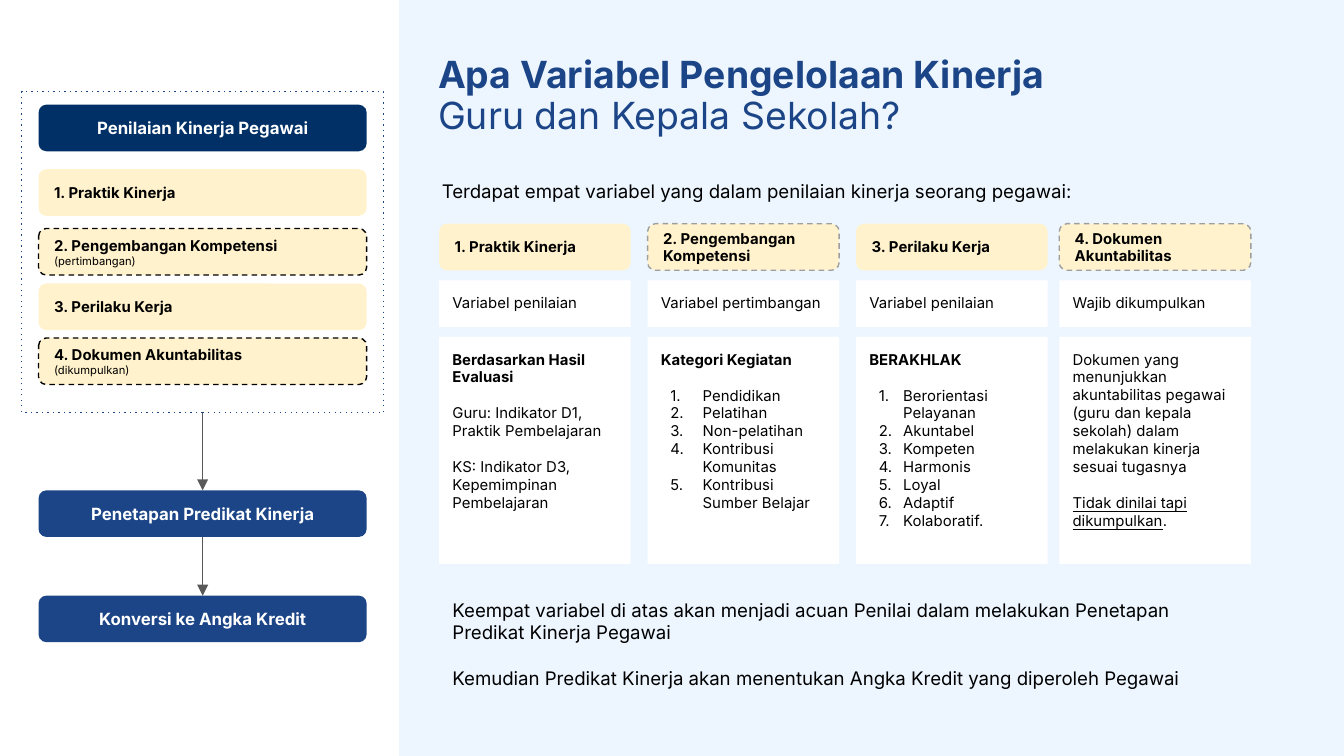
"""Build the slide on the performance variables of teachers and principals."""
from typing import NamedTuple

from lxml.etree import SubElement
from pptx import Presentation
from pptx.dml.color import RGBColor
from pptx.enum.dml import MSO_LINE as Dash
from pptx.enum.shapes import MSO_CONNECTOR as Connector, MSO_SHAPE as Shape
from pptx.enum.text import MSO_ANCHOR as Anchor, MSO_AUTO_SIZE as AutoSize, PP_ALIGN as Align
from pptx.oxml.ns import qn
from pptx.util import Cm, Pt

FONT = "Inter"
BLACK = RGBColor(0x00, 0x00, 0x00)
WHITE = RGBColor(0xFF, 0xFF, 0xFF)
PALE = RGBColor(0xED, 0xF6, 0xFF)
CREAM = RGBColor(0xFF, 0xF2, 0xCC)
BLUE = RGBColor(0x1C, 0x45, 0x87)
NAVY = RGBColor(0x01, 0x30, 0x66)
GREY = RGBColor(0x9E, 0x9E, 0x9E)
DARK_GREY = RGBColor(0x59, 0x59, 0x59)


class Line(NamedTuple):
    """One paragraph: its text, look and the space above it."""
    text: str
    bold: bool = False
    size: float = 8
    before: float = 0
    numbered: bool = False
    underlined: str = ""


def numbered_list(items):
    """Return numbered lines with a gap above the first."""
    return [Line(item, before=0 if i else 9.7, numbered=True) for i, item in enumerate(items)]


TITLE = [Line("Apa Variabel Pengelolaan Kinerja", True, 20), Line("Guru dan Kepala Sekolah?", size=20)]
INTRO = [Line("Terdapat empat variabel yang dalam penilaian kinerja seorang pegawai:", size=10)]
CLOSING = [
    Line("Keempat variabel di atas akan menjadi acuan Penilai dalam melakukan Penetapan "
         "Predikat Kinerja Pegawai", size=10),
    Line("Kemudian Predikat Kinerja akan menentukan Angka Kredit yang diperoleh Pegawai",
         size=10, before=12.1),
]
STEPS = [
    ("Penilaian Kinerja Pegawai", 1.98, NAVY),
    ("Penetapan Predikat Kinerja", 9.27, BLUE),
    ("Konversi ke Angka Kredit", 11.26, BLUE),
]
VARIABLES = [
    {"name": "1. Praktik Kinerja", "left": 8.3, "top": 3.2, "role": "Variabel penilaian", "note": "",
     "indent": None,
     "detail": [Line("Berdasarkan Hasil Evaluasi", True),
                Line("Guru: Indikator D1, Praktik Pembelajaran", before=9.7),
                Line("KS: Indikator D3, Kepemimpinan Pembelajaran", before=9.7)]},
    {"name": "2. Pengembangan Kompetensi", "left": 12.24, "top": 4.32, "role": "Variabel pertimbangan",
     "note": "(pertimbangan)", "indent": (0.79, 0.61),
     "detail": [Line("Kategori Kegiatan", True)] + numbered_list([
         "Pendidikan", "Pelatihan", "Non-pelatihan", "Kontribusi Komunitas",
         "Kontribusi Sumber Belajar"])},
    {"name": "3. Perilaku Kerja", "left": 16.18, "top": 5.36, "role": "Variabel penilaian", "note": "",
     "indent": (0.64, 0.46),
     "detail": [Line("BERAKHLAK", True)] + numbered_list([
         "Berorientasi Pelayanan", "Akuntabel", "Kompeten", "Harmonis", "Loyal", "Adaptif",
         "Kolaboratif."])},
    {"name": "4. Dokumen Akuntabilitas", "left": 20.02, "top": 6.39, "role": "Wajib dikumpulkan",
     "note": "(dikumpulkan)", "indent": None,
     "detail": [Line("Dokumen yang menunjukkan akuntabilitas pegawai (guru dan kepala sekolah) "
                     "dalam melakukan kinerja sesuai tugasnya"),
                Line(".", before=9.7, underlined="Tidak dinilai tapi dikumpulkan")]},
]
BAR_LEFT, BAR_WIDTH, BAR_HEIGHT = 0.73, 6.2, 0.88
CARD_WIDTH = 3.62
HEAD_TOP, ROLE_TOP, DETAIL_TOP, DETAIL_HEIGHT = 4.23, 5.3, 6.37, 4.29
FRAME = (0.41, 1.73, 6.84, 6.07)


def write(box, lines, color=BLACK, align=Align.LEFT, anchor=Anchor.TOP, spacing=1.0,
          indent=None, insets=(0.25, 0.25)):
    """Write the lines into a box, run by run."""
    frame = box.text_frame
    frame.word_wrap, frame.auto_size, frame.vertical_anchor = True, AutoSize.NONE, anchor
    frame.margin_left = frame.margin_right = Cm(insets[0])
    frame.margin_top = frame.margin_bottom = Cm(insets[1])
    for i, line in enumerate(lines):
        para = frame.add_paragraph() if i else frame.paragraphs[0]
        para.alignment, para.line_spacing = align, spacing
        para.space_before, para.space_after = Pt(line.before), Pt(0)
        settings = para._p.get_or_add_pPr()
        left, hang = indent if line.numbered else (0, 0)
        settings.set("marL", str(Cm(left)))
        settings.set("indent", str(-Cm(hang)))
        if line.numbered:
            SubElement(settings, qn("a:buFont"), typeface=FONT)
            SubElement(settings, qn("a:buAutoNum"), type="arabicPeriod")
        else:
            SubElement(settings, qn("a:buNone"))
        for text, underline in ((line.underlined, True), (line.text, False)):
            if text:
                span = para.add_run()
                span.text = text
                span.font.name, span.font.size = FONT, Pt(line.size)
                span.font.bold, span.font.underline = line.bold, underline
                span.font.color.rgb = color


def place(box, left, top, width, height):
    """Move and size a box, in centimetres."""
    box.left, box.top, box.width, box.height = Cm(left), Cm(top), Cm(width), Cm(height)


def add_box(page, bounds, fill=None, rounded=False, outline=None):
    """Add a flat rectangle, optionally rounded or with a dashed outline."""
    kind = Shape.ROUNDED_RECTANGLE if rounded else Shape.RECTANGLE
    box = page.shapes.add_shape(kind, *map(Cm, bounds))
    box.shadow.inherit = False
    if fill is None:
        box.fill.background()
    else:
        box.fill.solid()
        box.fill.fore_color.rgb = fill
    if outline is None:
        box.line.fill.background()
    else:
        box.line.color.rgb = outline
        box.line.width, box.line.dash_style = Pt(0.75), Dash.DASH
    return box


def add_arrow(page, x, start, end):
    """Add a downward arrow."""
    arrow = page.shapes.add_connector(Connector.STRAIGHT, Cm(x), Cm(start), Cm(x), Cm(end))
    arrow.line.color.rgb, arrow.line.width = DARK_GREY, Pt(0.75)
    SubElement(arrow.line._get_or_add_ln(), qn("a:tailEnd"), type="triangle")
    SubElement(arrow._element.spPr, qn("a:effectLst"))


def add_flow(page):
    """Draw the left panel with its steps, variables and arrows."""
    add_box(page, (0, 0, 7.54, 14.29), WHITE)
    frame = add_box(page, FRAME, outline=BLUE)
    frame.line._get_or_add_ln().find(qn("a:prstDash")).set("val", "dot")
    for name, top, fill in STEPS:
        bar = add_box(page, (BAR_LEFT, top, BAR_WIDTH, BAR_HEIGHT), fill, True)
        write(bar, [Line(name, True, 9)], WHITE, Align.CENTER, Anchor.MIDDLE)
    for variable in VARIABLES:
        note = variable["note"]
        bar = add_box(page, (BAR_LEFT, variable["top"], BAR_WIDTH, BAR_HEIGHT), CREAM, True,
                      BLACK if note else None)
        lines = [Line(variable["name"], True)] + ([Line(note, size=6)] if note else [])
        write(bar, lines, anchor=Anchor.MIDDLE)
    middle = BAR_LEFT + BAR_WIDTH / 2
    second, third = STEPS[1][1], STEPS[2][1]
    add_arrow(page, middle, FRAME[1] + FRAME[3], second)
    add_arrow(page, middle, second + BAR_HEIGHT, third)


def add_columns(page):
    """Draw one column of three cards for each variable."""
    for variable in VARIABLES:
        left = variable["left"]
        head = add_box(page, (left, HEAD_TOP, CARD_WIDTH, BAR_HEIGHT), CREAM, True,
                       GREY if variable["note"] else None)
        write(head, [Line(variable["name"], True)], anchor=Anchor.MIDDLE)
        role = add_box(page, (left, ROLE_TOP, CARD_WIDTH, BAR_HEIGHT), WHITE)
        write(role, [Line(variable["role"])])
        detail = add_box(page, (left, DETAIL_TOP, CARD_WIDTH, DETAIL_HEIGHT), WHITE)
        write(detail, variable["detail"], indent=variable["indent"])


def main():
    """Build and save the deck."""
    deck = Presentation()
    deck.slide_width, deck.slide_height = Cm(25.4), Cm(14.29)
    page = deck.slides.add_slide(deck.slide_layouts[1])
    page.background.fill.solid()
    page.background.fill.fore_color.rgb = PALE
    title, closing = page.placeholders
    place(title, 8.1, 0.51, 16.76, 2.64)
    write(title, TITLE, BLUE, anchor=Anchor.MIDDLE, spacing=0.9, insets=(0.18, 0.1))
    place(closing, 8.3, 11.07, 15.06, 1.88)
    write(closing, CLOSING)
    intro = page.shapes.add_textbox(Cm(8.1), Cm(3.15), Cm(14.2), Cm(0.71))
    write(intro, INTRO)
    add_columns(page)
    add_flow(page)
    deck.save("out.pptx")


if __name__ == "__main__":
    main()
